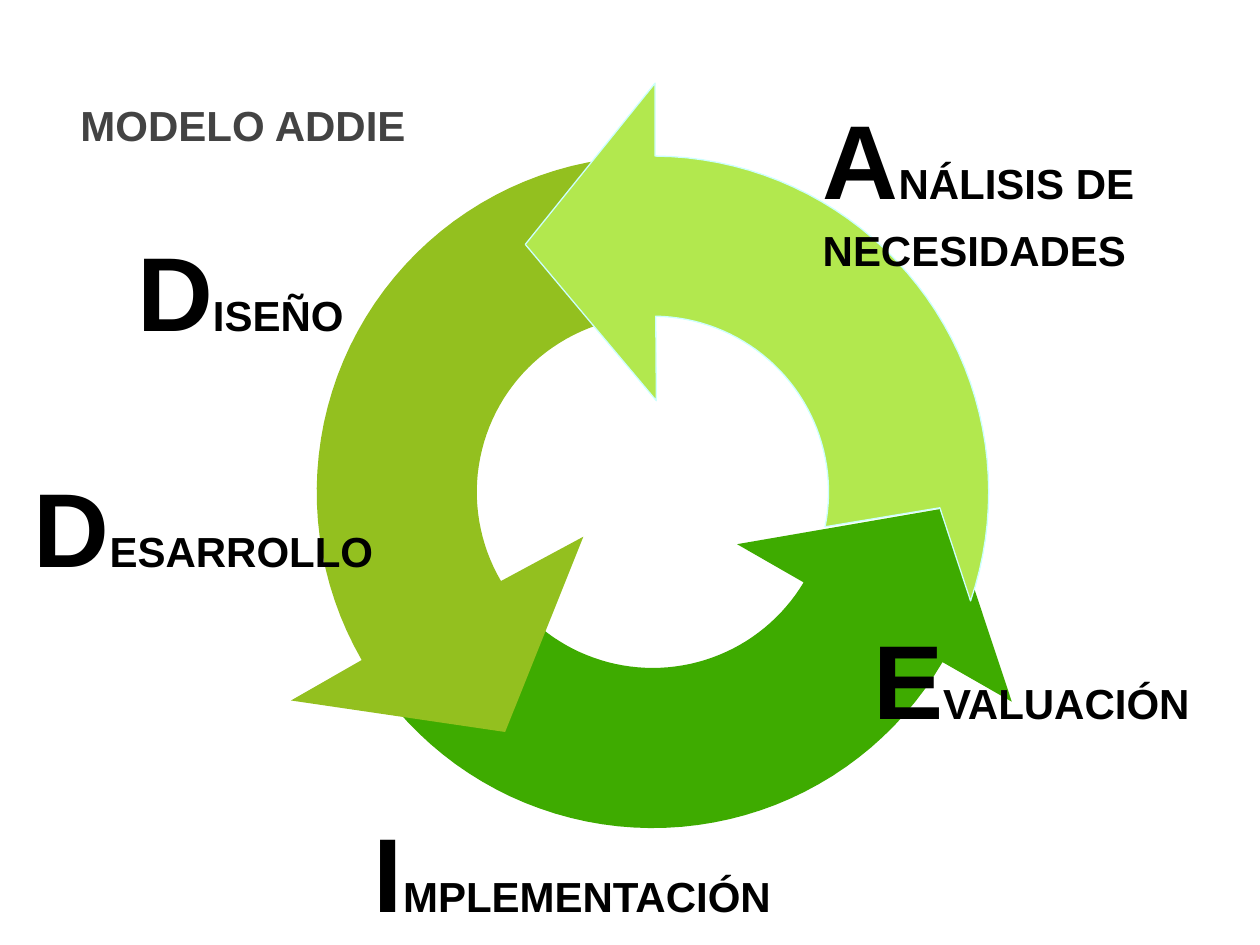
"""Builds the ADDIE model slide: a cycle of three arrows with its five phases."""
from dataclasses import dataclass
from math import cos, radians, sin
from typing import Optional

from pptx import Presentation
from pptx.dml.color import RGBColor
from pptx.enum.text import MSO_ANCHOR, MSO_AUTO_SIZE, PP_ALIGN
from pptx.slide import Slide
from pptx.util import Pt

Point = tuple[float, float]


@dataclass(frozen=True)
class Theme:
    font: str = "Arial"
    title: str = "434343"
    text: str = "000000"
    dark: str = "3EAB00"
    olive: str = "93C01F"
    light: str = "B2E84E"
    outline: str = "CCFFFF"
    initial_size: float = 60
    text_size: float = 24
    line_spacing: float = 1.08


@dataclass(frozen=True)
class CycleArrow:
    color: str
    outer: Point
    head: tuple[Point, ...]
    inner: Point
    tail: tuple[Point, ...] = ()
    outline: Optional[str] = None


@dataclass(frozen=True)
class Label:
    initial: str
    rest: str
    box: tuple[float, float, float, float]
    color: str
    inset: float = 3.6


THEME = Theme()
CENTER = (373, 281.2)
OUTER_RADIUS, INNER_RADIUS = 192, 100.5
ARC_STEPS = 40

ARROWS = (
    CycleArrow(THEME.dark, (139.6, 30.4),
               ((578.2, 401), (541.4, 290.2), (421.2, 311)), (30.9, 129.2)),
    CycleArrow(THEME.olive, (261.6, 150),
               ((166.3, 400.3), (288.7, 418.3), (333.4, 306.7)), (149.6, 253.7)),
    CycleArrow(THEME.light, (18.9, -89.6),
               ((374.4, 47.5), (300.2, 139.7), (375.1, 229)), (-89, 11.4),
               ((537.1, 290.2),), THEME.outline),
)

LABELS = (
    Label("", "MODELO ADDIE", (38.9, 47.5, 612, 90), THEME.title, 7.2),
    Label("A", "NÁLISIS DE NECESIDADES", (463, 44.6, 226.8, 108.7), THEME.text),
    Label("D", "ISEÑO", (71.3, 120.2, 161.3, 80), THEME.text),
    Label("D", "ESARROLLO", (12.2, 254.9, 224.6, 80), THEME.text),
    Label("E", "VALUACIÓN", (491.8, 342, 208, 80), THEME.text),
    Label("I", "MPLEMENTACIÓN", (206.6, 452.2, 276.5, 80), THEME.text),
)


def set_attributes(target: object, values: dict[str, object]) -> None:
    """Set each named value on the target."""
    for name, value in values.items():
        setattr(target, name, value)


def arc(radius: float, angles: Point) -> list[Point]:
    """Return points along an arc about the centre of the cycle."""
    start, end = angles
    steps = [radians(start + (end - start) * step / ARC_STEPS) for step in range(ARC_STEPS + 1)]
    return [(CENTER[0] + radius * cos(angle), CENTER[1] + radius * sin(angle)) for angle in steps]


def draw_arrow(slide: Slide, arrow: CycleArrow) -> None:
    """Draw one curved arrow of the cycle."""
    outline = [*arc(OUTER_RADIUS, arrow.outer), *arrow.head,
               *arc(INNER_RADIUS, arrow.inner), *arrow.tail]
    points = [(Pt(x), Pt(y)) for x, y in outline]
    builder = slide.shapes.build_freeform(*points[0])
    builder.add_line_segments(points[1:], close=True)
    shape = builder.convert_to_shape()
    shape.shadow.inherit = False
    shape.fill.solid()
    shape.fill.fore_color.rgb = RGBColor.from_string(arrow.color)
    if arrow.outline:
        shape.line.color.rgb = RGBColor.from_string(arrow.outline)
        shape.line.width = Pt(0.75)
    else:
        shape.line.fill.background()


def draw_label(slide: Slide, label: Label) -> None:
    """Draw a label whose initial is larger than the rest."""
    shape = slide.shapes.add_textbox(*(Pt(length) for length in label.box))
    inset = Pt(label.inset)
    set_attributes(shape.text_frame, {
        "word_wrap": True, "auto_size": MSO_AUTO_SIZE.NONE, "vertical_anchor": MSO_ANCHOR.TOP,
        "margin_left": Pt(7.2), "margin_right": Pt(7.2),
        "margin_top": inset, "margin_bottom": inset,
    })
    paragraph = shape.text_frame.paragraphs[0]
    set_attributes(paragraph, {"alignment": PP_ALIGN.LEFT, "line_spacing": THEME.line_spacing})
    for text, size in ((label.initial, THEME.initial_size), (label.rest, THEME.text_size)):
        if text:
            run = paragraph.add_run()
            run.text = text
            set_attributes(run.font, {"name": THEME.font, "size": Pt(size), "bold": True})
            run.font.color.rgb = RGBColor.from_string(label.color)


def main() -> None:
    """Build and save the slide."""
    presentation = Presentation()
    set_attributes(presentation, {"slide_width": Pt(720), "slide_height": Pt(540)})
    slide = presentation.slides.add_slide(presentation.slide_layouts[6])
    title, *phases = LABELS
    draw_label(slide, title)
    for arrow in ARROWS:
        draw_arrow(slide, arrow)
    for phase in phases:
        draw_label(slide, phase)
    presentation.save("out.pptx")


if __name__ == "__main__":
    main()
